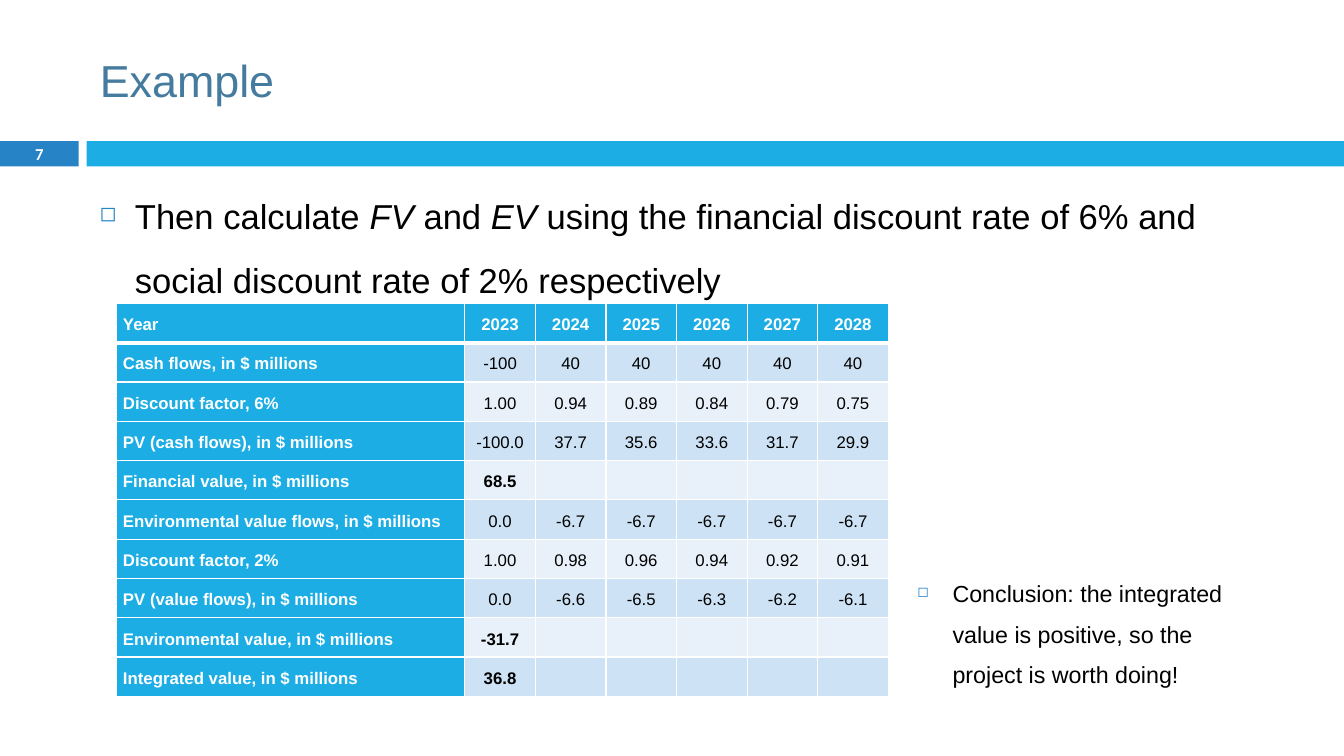
import dataclasses

import pptx
import pptx.dml.color
import pptx.enum.shapes
import pptx.enum.text
import pptx.oxml.ns
import pptx.util
from lxml import etree

PX = 9144  # EMU in one px, 100 px to the inch
COLORS = {
    "white": "FFFFFF",
    "black": "000000",
    "title": "457B9E",
    "number": "2683C6",
    "accent": "1CADE4",
    "band_dark": "CDE3F5",
    "band_light": "E8F1FA",
}
LEFT = pptx.enum.text.PP_ALIGN.LEFT
CENTER = pptx.enum.text.PP_ALIGN.CENTER
MIDDLE = pptx.enum.text.MSO_ANCHOR.MIDDLE


@dataclasses.dataclass
class Box:
    left: int
    top: int
    width: int
    height: int

    def emu(self) -> list[int]:
        return [v * PX for v in (self.left, self.top, self.width, self.height)]


@dataclasses.dataclass
class Bar:
    box: Box
    color: str


@dataclasses.dataclass
class Bullet:
    box: Box
    runs: list[tuple[str, bool]]  # text, italic
    size: float
    spacing: float


@dataclasses.dataclass
class Row:
    label: str
    values: list[str]
    bold: bool = False


BARS = [
    Bar(Box(0, 140, 78, 25), "number"),
    Bar(Box(86, 140, 1247, 25), "accent"),
]
BULLETS = [
    Bullet(Box(89, 166, 1136, 539),
           [("Then calculate ", False), ("FV ", True), ("and ", False), ("EV", True),
            (" using the financial discount rate of 6% and social discount rate"
             " of 2% respectively", False)], 24.7, 1.54),
    Bullet(Box(900, 557, 344, 130),
           [("Conclusion: the integrated value is positive, so the project is"
             " worth doing!", False)], 16.6, 1.46),
]
ROWS = [
    Row("Year", ["2023", "2024", "2025", "2026", "2027", "2028"], True),
    Row("Cash flows, in $ millions", ["-100"] + ["40"] * 5),
    Row("Discount factor, 6%", ["1.00", "0.94", "0.89", "0.84", "0.79", "0.75"]),
    Row("PV (cash flows), in $ millions", ["-100.0", "37.7", "35.6", "33.6", "31.7", "29.9"]),
    Row("Financial value, in $ millions", ["68.5"], True),
    Row("Environmental value flows, in $ millions", ["0.0"] + ["-6.7"] * 5),
    Row("Discount factor, 2%", ["1.00", "0.98", "0.96", "0.94", "0.92", "0.91"]),
    Row("PV (value flows), in $ millions", ["0.0", "-6.6", "-6.5", "-6.3", "-6.2", "-6.1"]),
    Row("Environmental value, in $ millions", ["-31.7"], True),
    Row("Integrated value, in $ millions", ["36.8"], True),
]
LABEL_W, YEAR_W, ROW_H = 346, 70, 39


def rgb(name: str) -> pptx.dml.color.RGBColor:
    return pptx.dml.color.RGBColor.from_string(COLORS[name])


def add_text(p, text: str, *, size: float, color: str = "black", font: str = "Arial",
             bold: bool = False, italic: bool = False, align=LEFT) -> None:
    p.alignment = align
    r = p.add_run()
    r.text = text
    r.font.name, r.font.size = font, pptx.util.Pt(size)
    r.font.bold, r.font.italic = bold, italic
    r.font.color.rgb = rgb(color)


def sub(parent, tag: str, **attrs: str):
    return etree.SubElement(parent, pptx.oxml.ns.qn(tag), attrs)


def add_bar(s, bar: Bar) -> None:
    sp = s.shapes.add_shape(pptx.enum.shapes.MSO_SHAPE.RECTANGLE, *bar.box.emu())
    sp.shadow.inherit = False
    sp.fill.solid()
    sp.fill.fore_color.rgb = rgb(bar.color)
    sp.line.fill.background()


def add_bullet(s, bullet: Bullet) -> None:
    tf = s.shapes.add_textbox(*bullet.box.emu()).text_frame
    tf.word_wrap = True
    p = tf.paragraphs[0]
    p.line_spacing = bullet.spacing
    p.space_before = pptx.util.Pt(7)
    for text, italic in bullet.runs:
        add_text(p, text, size=bullet.size, italic=italic)
    # Hanging square marker
    pPr = p._p.get_or_add_pPr()
    pPr.set("marL", str(35 * PX))
    pPr.set("indent", str(-35 * PX))
    sub(sub(pPr, "a:buClr"), "a:srgbClr", val=COLORS["number"])
    sub(pPr, "a:buSzPct", val="60000")
    sub(pPr, "a:buChar", char="◻")


def set_borders(cell, bottom: float) -> None:
    tcPr = cell._tc.get_or_add_tcPr()
    sides = {"a:lnL": 1, "a:lnR": 1, "a:lnT": 1, "a:lnB": bottom}
    for i, (tag, width) in enumerate(sides.items()):
        ln = etree.Element(pptx.oxml.ns.qn(tag), {"w": str(pptx.util.Pt(width))})
        sub(sub(ln, "a:solidFill"), "a:srgbClr", val=COLORS["white"])
        tcPr.insert(i, ln)


def fill_cell(cell, text: str, row: int, col: int, bold: bool) -> None:
    heading = row == 0 or col == 0
    fill = "accent" if heading else "band_dark" if row % 2 else "band_light"
    cell.fill.solid()
    cell.fill.fore_color.rgb = rgb(fill)
    cell.vertical_anchor = MIDDLE
    cell.margin_left = cell.margin_right = 7 * PX
    cell.margin_top = cell.margin_bottom = 0
    set_borders(cell, 3 if row == 0 else 1)
    if text:
        p = cell.text_frame.paragraphs[0]
        p.line_spacing = pptx.util.Pt(16)
        p.space_before = p.space_after = pptx.util.Pt(2 if col > 1 and "." in text else 1)
        add_text(p, text, size=12, color="white" if heading else "black",
                 bold=heading or bold, align=CENTER if col else LEFT)


def add_value_table(s) -> None:
    years = len(ROWS[0].values)
    box = Box(115, 301, LABEL_W + years * YEAR_W, len(ROWS) * ROW_H)
    table = s.shapes.add_table(len(ROWS), years + 1, *box.emu()).table
    for col, column in enumerate(table.columns):
        column.width = (YEAR_W if col else LABEL_W) * PX
    for i, row in enumerate(ROWS):
        table.rows[i].height = ROW_H * PX
        texts = [row.label] + row.values + [""] * (years - len(row.values))
        for col, text in enumerate(texts):
            fill_cell(table.cell(i, col), text, i, col, row.bold)


def main() -> None:
    prs = pptx.Presentation()
    prs.slide_width, prs.slide_height = 1333 * PX, 750 * PX
    s = prs.slides.add_slide(prs.slide_layouts[5])

    # Title
    title = s.shapes.title
    title.left, title.top, title.width, title.height = Box(89, 25, 1189, 108).emu()
    title.text_frame.vertical_anchor = MIDDLE
    add_text(title.text_frame.paragraphs[0], "Example", size=32, color="title")

    # Band with slide number
    for bar in BARS:
        add_bar(s, bar)
    tf = s.shapes.add_textbox(*Box(0, 139, 78, 27).emu()).text_frame
    tf.word_wrap = True
    tf.margin_top = tf.margin_bottom = 0
    tf.vertical_anchor = MIDDLE
    add_text(tf.paragraphs[0], "7", size=11.9, color="white", font="Calibri",
             bold=True, align=CENTER)

    # Task, calculation and conclusion
    task, conclusion = BULLETS
    add_bullet(s, task)
    add_value_table(s)
    add_bullet(s, conclusion)

    prs.save("out.pptx")


if __name__ == "__main__":
    main()
